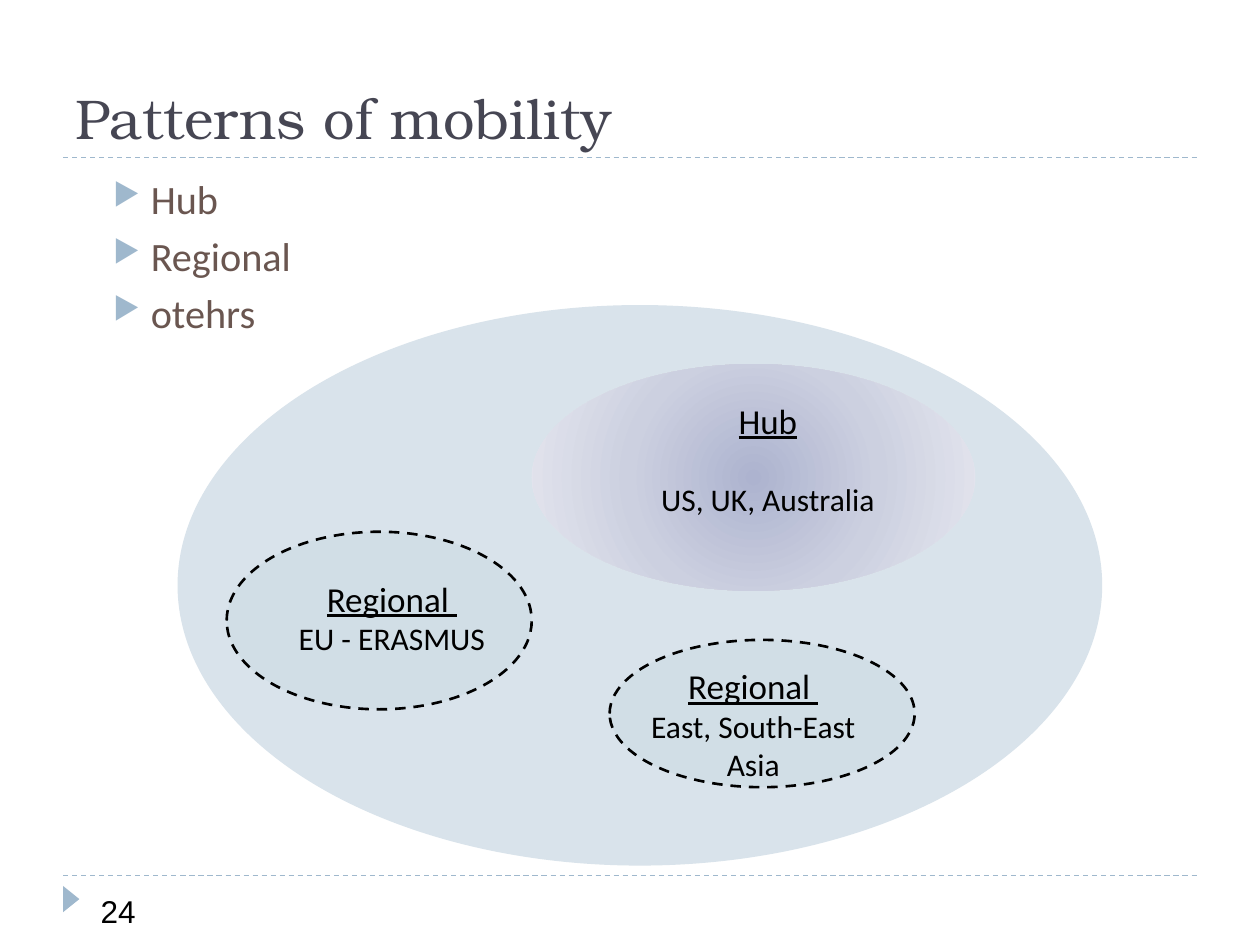
from dataclasses import dataclass

from lxml.etree import SubElement
from pptx import Presentation
from pptx.dml.color import RGBColor
from pptx.enum.dml import MSO_LINE
from pptx.enum.shapes import MSO_CONNECTOR, MSO_SHAPE
from pptx.enum.text import MSO_ANCHOR, PP_ALIGN
from pptx.oxml import parse_xml
from pptx.oxml.ns import nsdecls, qn
from pptx.util import Cm, Pt


@dataclass(frozen=True)
class Theme:
    accent: str = "9FB8CD"
    title: str = "464653"
    body: str = "6A5650"
    ink: str = "000000"
    world: str = "D9E3EB"
    region: str = "94BAC3"
    hub: tuple = ((0, "ADB3CF"), (50, "CCD0E0"), (100, "E6E7EF"))
    title_font: str = "TeX Gyre Bonum"
    body_font: str = "Calibri"
    number_font: str = "Arial"
    title_size: int = 32
    bullet_size: int = 23
    heading_size: int = 20
    label_size: int = 18


theme = Theme()


def add_shape(kind, box, color):
    """Add a borderless shape without shadow; box is in centimetres."""
    sp = s.shapes.add_shape(kind, *map(Cm, box))
    sp.shadow.inherit = False
    sp.fill.solid()
    sp.fill.fore_color.rgb = RGBColor.from_string(color)
    sp.line.fill.background()
    return sp


def add_text(box, lines, font, size, color):
    """Add a wrapped text box with one paragraph per line."""
    tf = s.shapes.add_textbox(*map(Cm, box)).text_frame
    tf.word_wrap = True
    tf.text = "\n".join(lines)
    for p in tf.paragraphs:
        for r in p.runs:
            r.font.name = font
            r.font.size = Pt(size)
            r.font.color.rgb = RGBColor.from_string(color)
    return tf


prs = Presentation()
prs.slide_width, prs.slide_height = Cm(25.4), Cm(19.05)
s = prs.slides.add_slide(prs.slide_layouts[6])

# Rules and footer
for y in (17.65, 3.18):
    rule = s.shapes.add_connector(MSO_CONNECTOR.STRAIGHT, Cm(1.27), Cm(y), Cm(24.13), Cm(y))
    rule.line.color.rgb = RGBColor.from_string(theme.accent)
    rule.line.width = Pt(0.75)
    rule.line.dash_style = MSO_LINE.DASH
    SubElement(rule._element.spPr, qn("a:effectLst"))

marker = add_shape(MSO_SHAPE.ISOSCELES_TRIANGLE, (1.17, 17.96, 0.53, 0.33), theme.accent)
marker.rotation = 90
add_text((1.78, 17.86, 3.38, 1.02), ["24"], theme.number_font, theme.label_size, theme.ink)

# The world, behind everything else
add_shape(MSO_SHAPE.OVAL, (3.58, 6.15, 18.64, 11.3), theme.world)

# Title and bullets
tf = add_text((1.27, 0.43, 22.86, 2.74), ["Patterns of mobility"],
              theme.title_font, theme.title_size, theme.title)
tf.vertical_anchor = MSO_ANCHOR.BOTTOM

tf = add_text((1.27, 3.38, 10.64, 4.75), ["Hub", "Regional", "otehrs"],
              theme.body_font, theme.bullet_size, theme.body)
for p in tf.paragraphs:
    p.space_before = Pt(5)
    pPr = p._p.get_or_add_pPr()
    pPr.set("marL", str(Cm(1.52)))
    pPr.set("indent", str(Cm(-0.76)))
    color = SubElement(pPr, qn("a:buClr"))
    SubElement(color, qn("a:srgbClr"), val=theme.accent)
    SubElement(pPr, qn("a:buSzPct"), val="76000")
    SubElement(pPr, qn("a:buChar"), char="▶")

# Hub with a radial gradient
hub = add_shape(MSO_SHAPE.OVAL, (10.72, 7.34, 8.94, 4.57), theme.world)
stops = "".join(f'<a:gs pos="{pos * 1000}"><a:srgbClr val="{color}"/></a:gs>'
                for pos, color in theme.hub)
gradient = parse_xml(
    f'<a:gradFill {nsdecls("a")} rotWithShape="1"><a:gsLst>{stops}</a:gsLst>'
    '<a:path path="circle"><a:fillToRect l="50000" t="50000" r="50000" b="50000"/></a:path>'
    '</a:gradFill>')
solid = hub._element.spPr.find(qn("a:solidFill"))
solid.getparent().replace(solid, gradient)

# Regions with a faint fill and a dashed outline
for box in ((4.57, 10.72, 6.15, 3.58), (12.29, 12.9, 6.15, 2.97)):
    region = add_shape(MSO_SHAPE.OVAL, box, theme.region)
    fill_color = region._element.spPr.find(qn("a:solidFill"))[0]
    SubElement(fill_color, qn("a:alpha"), val="10000")
    region.line.color.rgb = RGBColor.from_string(theme.ink)
    region.line.width = Pt(1.5)
    region.line.dash_style = MSO_LINE.DASH

# Labels: box, lines, gap below the heading in points
labels = (
    ((5.69, 11.51, 4.42, 2.64), ["Regional ", "EU - ERASMUS"], 0),
    ((12.7, 7.92, 5.56, 2.64), ["Hub", "US, UK, Australia"], 22),
    ((12.29, 13.28, 5.79, 2.64), ["Regional ", "East, South-East", "Asia"], 0),
)
for box, lines, gap in labels:
    tf = add_text(box, lines, theme.body_font, theme.label_size, theme.ink)
    for p in tf.paragraphs:
        p.alignment = PP_ALIGN.CENTER
    heading = tf.paragraphs[0]
    heading.space_after = Pt(gap)
    heading.runs[0].font.size = Pt(theme.heading_size)
    heading.runs[0].font.underline = True

prs.save("out.pptx")
